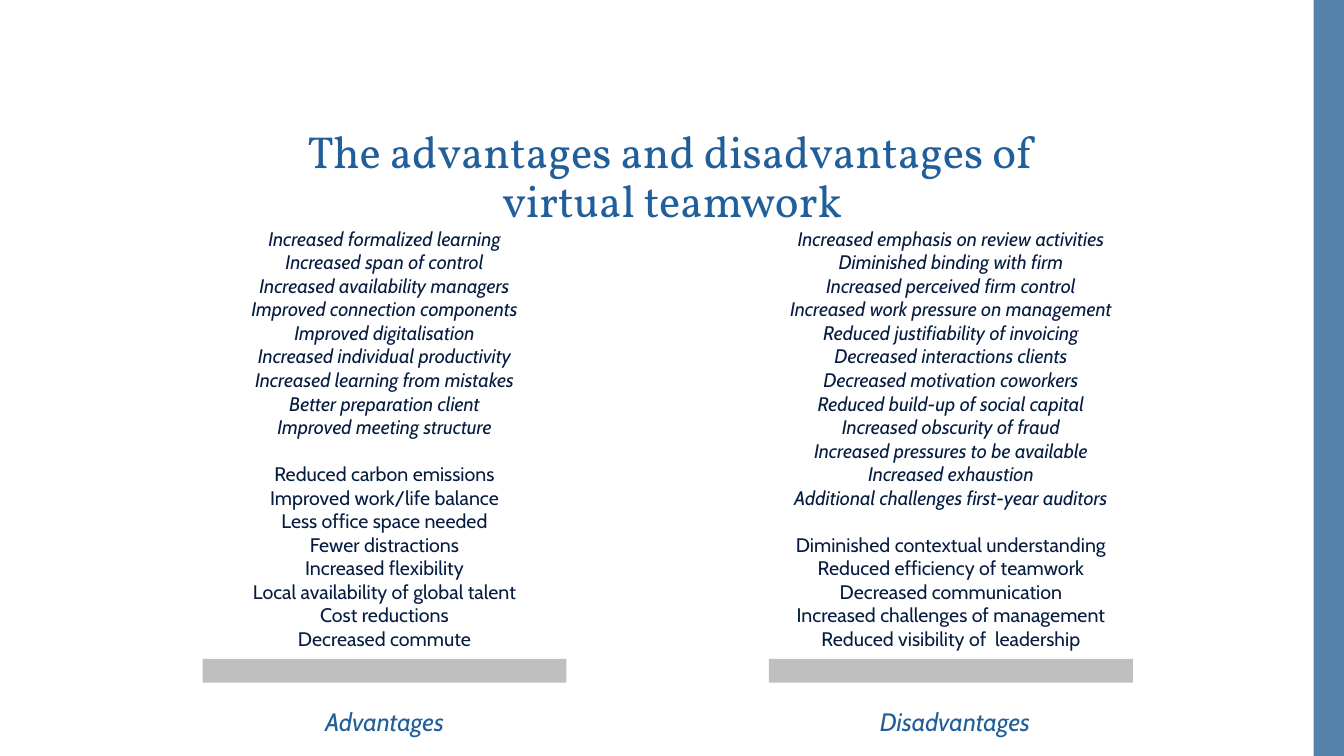
"""Build a slide that sets the advantages of virtual teamwork beside its disadvantages."""
from dataclasses import dataclass

from pptx import Presentation
from pptx.dml.color import RGBColor
from pptx.enum import shapes, text
from pptx.util import Pt

TITLE = "The advantages and disadvantages of virtual teamwork"
COLUMNS = [
    {
        "label": "Advantages",
        "center": 274.7,
        "label_center": 274.7,
        "italic": [
            "Increased formalized learning",
            "Increased span of control",
            "Increased availability managers",
            "Improved connection components",
            "Improved digitalisation",
            "Increased individual productivity",
            "Increased learning from mistakes",
            "Better preparation client",
            "Improved meeting structure",
        ],
        "upright": [
            "Reduced carbon emissions",
            "Improved work/life balance",
            "Less office space needed",
            "Fewer distractions",
            "Increased flexibility",
            "Local availability of global talent",
            "Cost reductions",
            "Decreased commute",
        ],
    },
    {
        "label": "Disadvantages",
        "center": 679.3,
        "label_center": 682.2,
        "italic": [
            "Increased emphasis on review activities",
            "Diminished binding with firm",
            "Increased perceived firm control",
            "Increased work pressure on management",
            "Reduced justifiability of invoicing",
            "Decreased interactions clients",
            "Decreased motivation coworkers",
            "Reduced build-up of social capital",
            "Increased obscurity of fraud",
            "Increased pressures to be available",
            "Increased exhaustion",
            "Additional challenges first-year auditors",
        ],
        "upright": [
            "Diminished contextual understanding",
            "Reduced efficiency of teamwork",
            "Decreased communication",
            "Increased challenges of management",
            "Reduced visibility of  leadership",
        ],
    },
]


@dataclass(frozen=True)
class Theme:
    """Colours, fonts and type sizes of the slide."""
    heading: str = "215F9A"
    body: str = "061D41"
    bar: str = "BFBFBF"
    strip: str = "5482AB"
    title_font: str = "Vollkorn"
    body_font: str = "Cabin"
    title_size: float = 32
    label_size: float = 18
    body_size: float = 14
    group_gap: float = 16.8


THEME = Theme()
WIDTH, HEIGHT = 960, 540
STRIP_WIDTH = 21.6
BAR_TOP, BAR_WIDTH, BAR_HEIGHT = 470.7, 260, 17
LIST_TOP, LIST_WIDTH, LIST_HEIGHT = 158.4, 304.6, 312.5
LABEL_TOP, LABEL_WIDTH, LABEL_HEIGHT = 501.1, 130, 29


def write(para, content, *, size, color, font=THEME.body_font, italic=False, before=0, spacing=1.0):
    """Put centred, formatted text into a paragraph."""
    para.alignment = text.PP_ALIGN.CENTER
    para.line_spacing = spacing
    para.space_before = Pt(before)
    span = para.add_run()
    span.text = content
    span.font.name = font
    span.font.size = Pt(size)
    span.font.italic = italic
    span.font.color.rgb = RGBColor.from_string(color)


def add_block(page, left, top, width, height, color):
    """Draw a plain filled rectangle."""
    block = page.shapes.add_shape(shapes.MSO_SHAPE.RECTANGLE, Pt(left), Pt(top), Pt(width), Pt(height))
    block.shadow.inherit = False
    block.fill.solid()
    block.fill.fore_color.rgb = RGBColor.from_string(color)
    block.line.fill.background()


def add_frame(page, center, top, width, height, wrap=True):
    """Add a text box centred on a column and return its text frame."""
    box = page.shapes.add_textbox(Pt(center - width / 2), Pt(top), Pt(width), Pt(height))
    box.text_frame.word_wrap = wrap
    return box.text_frame


def add_title(page):
    """Place and format the title placeholder."""
    title = page.shapes.title
    title.left, title.top, title.width, title.height = Pt(169.2), Pt(89.3), Pt(622), Pt(104.4)
    title.text_frame.word_wrap = True
    title.text_frame.auto_size = text.MSO_AUTO_SIZE.NONE
    title.text_frame.vertical_anchor = text.MSO_ANCHOR.TOP
    write(title.text_frame.paragraphs[0], TITLE, size=THEME.title_size, color=THEME.heading,
          font=THEME.title_font, spacing=0.9)


def add_column(page, column):
    """Draw one column: its list, its bar and its label."""
    center = column["center"]
    add_block(page, center - BAR_WIDTH / 2, BAR_TOP, BAR_WIDTH, BAR_HEIGHT, THEME.bar)
    label = add_frame(page, column["label_center"], LABEL_TOP, LABEL_WIDTH, LABEL_HEIGHT, wrap=False)
    write(label.paragraphs[0], column["label"], size=THEME.label_size, color=THEME.heading, italic=True)

    frame = add_frame(page, center, LIST_TOP, LIST_WIDTH, LIST_HEIGHT)
    first_upright = len(column["italic"])
    for index, item in enumerate(column["italic"] + column["upright"]):
        para = frame.add_paragraph() if index else frame.paragraphs[0]
        write(para, item, size=THEME.body_size, color=THEME.body, italic=index < first_upright,
              before=THEME.group_gap if index == first_upright else 0)


def main():
    """Assemble and save the deck."""
    deck = Presentation()
    deck.slide_width, deck.slide_height = Pt(WIDTH), Pt(HEIGHT)
    page = deck.slides.add_slide(deck.slide_layouts[5])
    add_block(page, WIDTH - STRIP_WIDTH, 0, STRIP_WIDTH, HEIGHT, THEME.strip)
    add_title(page)
    for column in COLUMNS:
        add_column(page, column)
    deck.save("out.pptx")


if __name__ == "__main__":
    main()
